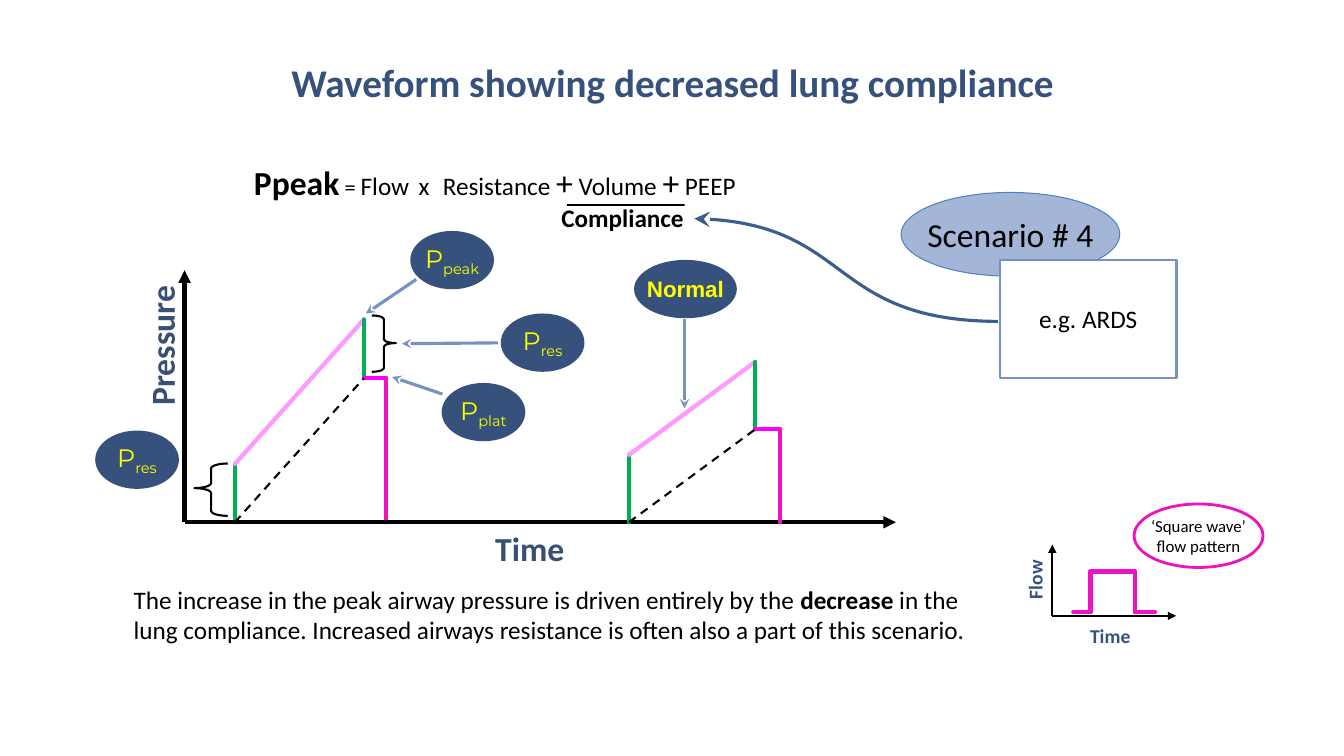
from itertools import pairwise

from lxml import etree
from pptx import Presentation
from pptx.dml.color import RGBColor
from pptx.enum.dml import MSO_LINE
from pptx.enum.shapes import MSO_CONNECTOR, MSO_SHAPE
from pptx.enum.text import MSO_ANCHOR, PP_ALIGN
from pptx.oxml.ns import qn
from pptx.util import Cm, Pt

DASH, STRAIGHT = MSO_LINE.DASH, MSO_CONNECTOR.STRAIGHT
OVAL, RECTANGLE = MSO_SHAPE.OVAL, MSO_SHAPE.RECTANGLE
LEFT_BRACE, RIGHT_BRACE = MSO_SHAPE.LEFT_BRACE, MSO_SHAPE.RIGHT_BRACE
MIDDLE, TOP, BOTTOM = MSO_ANCHOR.MIDDLE, MSO_ANCHOR.TOP, MSO_ANCHOR.BOTTOM
CENTER, LEFT = PP_ALIGN.CENTER, PP_ALIGN.LEFT


class Theme:
    font, callout_font, normal_font = "Calibri", "Montserrat", "Arial"
    title, large, body, normal, small, tiny = 28, 24, 18, 16, 14, 12
    black, white, yellow = "000000", "FFFFFF", "FFFF00"
    navy, slate, arrow, curve = "37517D", "385072", "7692C2", "3A5F8C"
    scenario, scenario_edge = "A3B6D7", "4F81BD"
    resistance, rise, plateau, flow = "00B050", "FF99FF", "FF00FF", "ED13BE"


# Text and drawing helpers; all lengths are in centimetres
def write(para, text, size=Theme.body, color=Theme.black, font=Theme.font, bold=False, **extra):
    span = para.add_run()
    span.text = text
    span.font.size, span.font.name, span.font.bold = Pt(size), font, bold
    span.font.color.rgb = RGBColor.from_string(color)
    for name, value in extra.items():
        span.font._element.set(name, str(value))


def prepare(shape, anchor=MIDDLE, align=CENTER, wrap=False):
    frame = shape.text_frame
    frame.word_wrap, frame.vertical_anchor = wrap, anchor
    frame.paragraphs[0].alignment = align
    return frame.paragraphs[0]


def add_text(page, left, top, width, height, **layout):
    box = page.shapes.add_textbox(Cm(left), Cm(top), Cm(width), Cm(height))
    return prepare(box, wrap=True, **layout)


def add_label(page, text, center, turn, size, color):
    width, height = size * 0.2, size * 0.05
    x, y = center
    para = add_text(page, x - width / 2, y - height / 2, width, height)
    page.shapes[-1].rotation = turn
    write(para, text, size=size, color=color, bold=True)


def set_line(line, color, weight):
    line.color.rgb = RGBColor.from_string(color)
    line.width = Pt(weight)


def add_figure(page, kind, left, top, width, height, fill=None, edge=None, weight=1.5):
    shape = page.shapes.add_shape(kind, Cm(left), Cm(top), Cm(width), Cm(height))
    shape.shadow.inherit = False
    if fill:
        shape.fill.solid()
        shape.fill.fore_color.rgb = RGBColor.from_string(fill)
    else:
        shape.fill.background()
    if edge:
        set_line(shape.line, edge, weight)
    else:
        shape.line.fill.background()
    return shape


def add_line(page, start, end, color=Theme.black, weight=3, dash=None, tail=None):
    line = page.shapes.add_connector(STRAIGHT, *map(Cm, (*start, *end)))
    set_line(line.line, color, weight)
    line.line.dash_style = dash
    properties = line._element.spPr
    outline = properties.find(qn("a:ln"))
    if tail:
        etree.SubElement(outline, qn("a:tailEnd")).set("type", tail)
    elif not dash:
        outline.set("cap", "rnd")
    etree.SubElement(properties, qn("a:effectLst"))


def add_curve(page, points, color, weight):
    start, *others = [(Cm(x), Cm(y)) for x, y in points]
    builder = page.shapes.build_freeform(*start)
    builder.add_line_segments(others, close=False)
    curve = builder.convert_to_shape()
    curve.shadow.inherit = False
    curve.fill.background()
    set_line(curve.line, color, weight)
    # The three segments become the control points and end of one cubic
    segments = list(curve._element.iter(qn("a:lnTo")))
    outline = segments[0].getparent()
    cubic = etree.SubElement(outline, qn("a:cubicBezTo"))
    for segment in segments:
        cubic.append(segment[0])
        outline.remove(segment)
    head = etree.SubElement(curve._element.spPr.find(qn("a:ln")), qn("a:headEnd"))
    for name, value in (("type", "stealth"), ("w", "lg"), ("len", "lg")):
        head.set(name, value)


def add_axes(page, left, base, right, top, weight):
    for end in ((right, base), (left, top)):
        add_line(page, (left, base), end, weight=weight, tail="triangle")


# Title and explanation
def add_title(page, *box):
    para = add_text(page, *box, anchor=BOTTOM)
    para.line_spacing = 0.9
    write(para, "Waveform showing decreased lung compliance", Theme.title, Theme.navy, bold=True)


def add_explanation(page, *box):
    para = add_text(page, *box, anchor=TOP, align=LEFT)
    write(para, "The increase in the peak airway pressure is driven entirely by the ")
    write(para, "decrease", bold=True)
    write(para, " in the lung compliance. Increased airways resistance is often "
                "also a part of this scenario.")


# Formula, with the denominator indented below its fraction bar
def add_formula(page, left, top, width, height):
    para = add_text(page, left, top, width, height)
    denominator = page.shapes[-1].text_frame.add_paragraph()
    write(para, "Ppeak", Theme.large, bold=True)
    write(para, " = ", Theme.normal)
    write(para, "Flow")
    write(para, " x ", spc=270)
    for term, sign in (("Resistance ", "+"), (" Volume ", "+")):
        write(para, term)
        write(para, sign, Theme.large)
    write(para, " PEEP")
    denominator.alignment = CENTER
    denominator._p.get_or_add_pPr().set("marL", str(Cm(6.44)))
    write(denominator, "Compliance", bold=True)
    add_line(page, (left + 9.35, top + 1.35), (left + 12.29, top + 1.35), weight=1.25)


# Scenario badge, its example and the curve to the formula
def add_scenario(page, left, top):
    badge = add_figure(page, OVAL, left + 5.21, top, 5.51, 2.11,
                       Theme.scenario, Theme.scenario_edge, 0.75)
    write(prepare(badge), "Scenario # 4", Theme.large)
    example = add_figure(page, RECTANGLE, left + 7.7, top + 1.7, 4.45, 2.97,
                         Theme.white, Theme.arrow)
    write(prepare(example), "e.g. ARDS")
    bends = ((0, 0.66), (4.01, 0.74), (3.43, 3.23), (7.65, 3.25))
    add_curve(page, [(left + x, top + y) for x, y in bends], Theme.curve, 2.25)


# One breath: resistance step, rise to the peak, drop to the plateau, release
def add_breath(page, left, base, step, peak, plateau, rise_width):
    summit = left + rise_width
    points = ((left, base), (left, base - step), (summit, base - peak),
              (summit, base - plateau), (left + 3.81, base - plateau), (left + 3.81, base))
    colors = (Theme.resistance, Theme.rise, Theme.resistance, Theme.plateau, Theme.flow)
    for (begin, end), color in zip(pairwise(points), colors):
        add_line(page, begin, end, color)
    add_line(page, points[0], points[3], weight=1.5, dash=DASH)


def add_pressure_chart(page, left, top):
    base = top + 7.34
    add_breath(page, left + 3.52, base, 1.47, 5.11, 3.63, 3.25)
    add_axes(page, left + 2.25, base, left + 20.18, top + 0.99, 3)
    add_breath(page, left + 13.45, base, 1.7, 4.04, 2.34, 3.18)
    # Braces over the resistive pressure
    for kind, x, y, width, height, middle in ((LEFT_BRACE, 2.5, 5.86, 0.84, 1.32, 0.47),
                                              (RIGHT_BRACE, 6.97, 2.13, 0.61, 1.42, 0.49)):
        brace = add_figure(page, kind, left + x, top + y, width, height, edge=Theme.black)
        brace.adjustments[0], brace.adjustments[1] = 0.15, middle
    # Callouts and their arrows
    for x, y, subscript in ((7.94, 0, "peak"), (0, 5.03, "res"),
                            (8.73, 3.83, "plat"), (10.22, 2.08, "res")):
        para = prepare(add_figure(page, OVAL, left + x, top + y, 2.11, 1.47, Theme.navy))
        write(para, "P", color=Theme.yellow, font=Theme.callout_font)
        write(para, subscript, color=Theme.yellow, font=Theme.callout_font, baseline=-25000)
    normal = add_figure(page, OVAL, left + 13.58, top + 0.73, 2.59, 1.47, Theme.navy)
    write(prepare(normal), "Normal", Theme.normal, Theme.yellow, Theme.normal_font, bold=True)
    for x1, y1, x2, y2 in ((8.09, 1.22, 6.82, 2.08), (8.75, 4.11, 7.48, 3.68),
                           (10.15, 2.82, 7.73, 2.84), (14.85, 2.21, 14.85, 4.47)):
        add_line(page, (left + x1, top + y1), (left + x2, top + y2),
                 Theme.arrow, 2.25, tail="stealth")
    add_label(page, "Pressure", (left + 1.67, top + 2.89), 270, Theme.large, Theme.slate)
    add_label(page, "Time", (left + 10.95, top + 7.99), 0, Theme.large, Theme.slate)


# Small square-wave flow chart
def add_flow_chart(page, left, top):
    add_axes(page, left + 1.12, top + 2.82, left + 4.24, top + 1.02, 1.5)
    wave = ((1.65, 2.72), (2.08, 2.72), (2.08, 1.7), (3.2, 1.7), (3.2, 2.72), (3.71, 2.72))
    for begin, end in pairwise((left + x, top + y) for x, y in wave):
        add_line(page, begin, end, Theme.flow)
    add_label(page, "Time", (left + 2.58, top + 3.33), 0, Theme.small, Theme.navy)
    add_label(page, "Flow", (left + 0.68, top + 1.91), 270, Theme.small, Theme.navy)
    badge = add_figure(page, OVAL, left + 3.18, top, 3.25, 1.6, edge=Theme.flow, weight=2)
    write(prepare(badge), "‘Square wave’", Theme.tiny)
    second = badge.text_frame.add_paragraph()
    second.alignment = CENTER
    write(second, "flow pattern", Theme.tiny)


deck = Presentation()
deck.slide_width, deck.slide_height = Cm(33.87), Cm(19.05)
page = deck.slides.add_slide(deck.slide_layouts[6])
add_title(page, 2.34, 0.18, 29.21, 2.62)
add_formula(page, 4.95, 3.81, 15.04, 2.34)
add_scenario(page, 17.5, 4.85)
add_pressure_chart(page, 2.4, 5.82)
add_explanation(page, 3.12, 14.6, 21.77, 1.8)
add_flow_chart(page, 25.4, 12.7)
deck.save("out.pptx")
